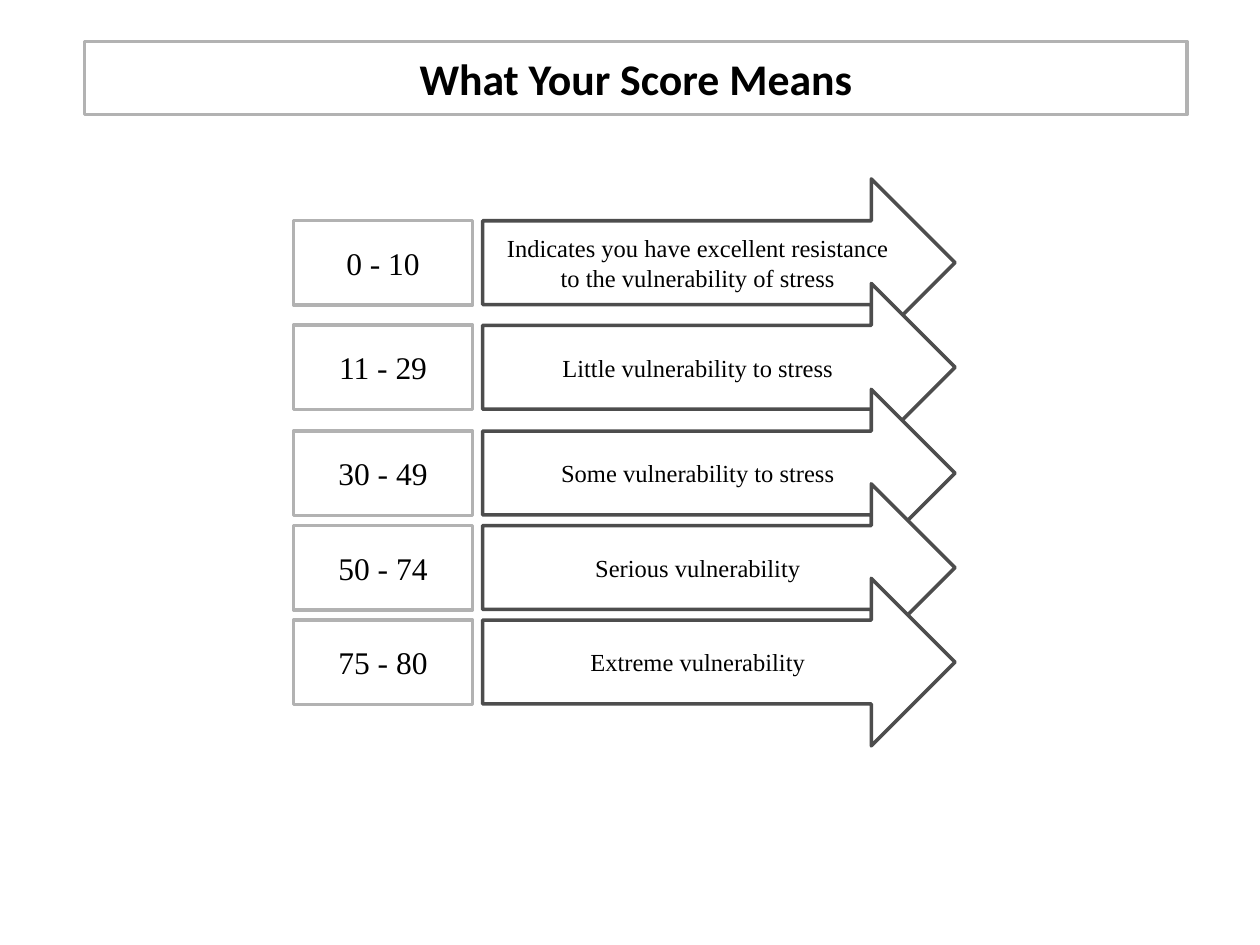
from pptx import Presentation
from pptx.dml.color import RGBColor
from pptx.enum.shapes import MSO_SHAPE
from pptx.enum.text import MSO_ANCHOR, PP_ALIGN
from pptx.util import Inches, Pt

TITLE = "What Your Score Means"
# row top, score range, meaning
SCORES = [
    (1.75, "0 - 10", "Indicates you have excellent resistance to the vulnerability of stress"),
    (2.58, "11 - 29", "Little vulnerability to stress"),
    (3.42, "30 - 49", "Some vulnerability to stress"),
    (4.17, "50 - 74", "Serious vulnerability"),
    (4.92, "75 - 80", "Extreme vulnerability"),
]

COLORS = {"fill": "FFFFFF", "text": "000000", "box": "B2B2B2", "arrow": "4D4D4D"}
TITLE_FONT = {"name": "Calibri", "size": Pt(25), "bold": True}
RANGE_FONT = {"name": "Times New Roman", "size": Pt(18)}
MEANING_FONT = {"name": "Times New Roman", "size": Pt(14)}

RANGE_LEFT, RANGE_WIDTH, RANGE_HEIGHT = 2.33, 1.42, 0.67
ARROW_LEFT, ARROW_WIDTH, ARROW_HEIGHT = 3.83, 3.75, 1.33


def color(name):
    return RGBColor.from_string(COLORS[name])


def add_label(slide, kind, place, text, line, font):
    """Add an outlined shape with centred text; place is left, top, width, height."""
    shape = slide.shapes.add_shape(kind, *map(Inches, place))
    shape.shadow.inherit = False
    shape.fill.solid()
    shape.fill.fore_color.rgb = color("fill")
    shape.line.color.rgb = color(line)
    shape.line.width = Pt(2)
    frame = shape.text_frame
    frame.word_wrap = True
    frame.vertical_anchor = MSO_ANCHOR.MIDDLE
    para = frame.paragraphs[0]
    para.alignment = PP_ALIGN.CENTER
    span = para.add_run()
    span.text = text
    span.font.color.rgb = color("text")
    for key, value in font.items():
        setattr(span.font, key, value)


def main():
    deck = Presentation()
    deck.slide_width, deck.slide_height = Inches(10), Inches(7.5)
    slide = deck.slides.add_slide(deck.slide_layouts[6])

    add_label(slide, MSO_SHAPE.RECTANGLE, (0.67, 0.33, 8.75, 0.58), TITLE, "box", TITLE_FONT)
    for top, score_range, _ in SCORES:
        place = (RANGE_LEFT, top, RANGE_WIDTH, RANGE_HEIGHT)
        add_label(slide, MSO_SHAPE.RECTANGLE, place, score_range, "box", RANGE_FONT)
    # Each arrow is centred on its row and overlaps the one above
    for top, _, meaning in SCORES:
        arrow_top = top + (RANGE_HEIGHT - ARROW_HEIGHT) / 2
        place = (ARROW_LEFT, arrow_top, ARROW_WIDTH, ARROW_HEIGHT)
        add_label(slide, MSO_SHAPE.RIGHT_ARROW, place, meaning, "arrow", MEANING_FONT)

    deck.save("out.pptx")


if __name__ == "__main__":
    main()
